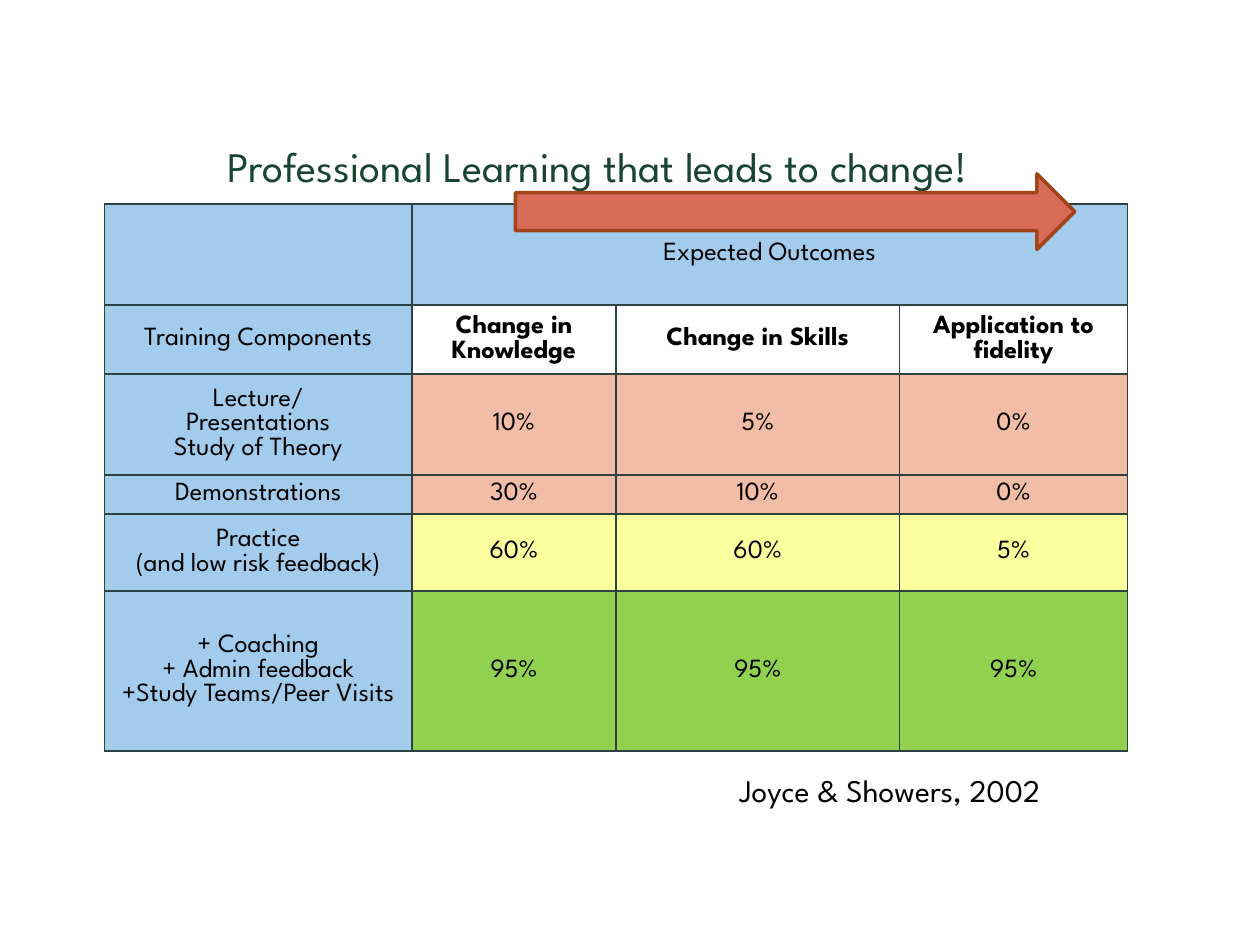
from lxml.etree import SubElement
from pptx import Presentation
from pptx.dml.color import RGBColor
from pptx.enum.shapes import MSO_SHAPE as Shape
from pptx.enum.text import MSO_ANCHOR as Anchor, PP_ALIGN as Align
from pptx.oxml.ns import qn
from pptx.util import Inches, Pt

BLACK = RGBColor(0x00, 0x00, 0x00)
WHITE = RGBColor(0xFF, 0xFF, 0xFF)
GREEN_TEXT = RGBColor(0x19, 0x44, 0x31)
BORDER = RGBColor(0x2D, 0x41, 0x41)
BLUE = RGBColor(0xA2, 0xCB, 0xEC)
PINK = RGBColor(0xF2, 0xBD, 0xA6)
YELLOW = RGBColor(0xFC, 0xFF, 0x9E)
GREEN = RGBColor(0x92, 0xD0, 0x50)
RED = RGBColor(0xD7, 0x6D, 0x59)
RUST = RGBColor(0xA3, 0x43, 0x18)

COLUMN_WIDTHS = [24.4, 16.2, 22.5, 18.1]
ROWS = [
    (8, WHITE, ["", "Expected Outcomes", "", ""]),
    (5.5, WHITE, ["Training Components", "Change in Knowledge",
                  "Change in Skills", "Application to fidelity"]),
    (8, PINK, ["Lecture/\nPresentations\nStudy of Theory", "10%", "5%", "0%"]),
    (3.1, PINK, ["Demonstrations", "30%", "10%", "0%"]),
    (6.1, YELLOW, ["Practice\n(and low risk feedback)", "60%", "60%", "5%"]),
    (12.7, GREEN, ["+ Coaching\n+ Admin feedback\n+Study Teams/Peer Visits",
                   "95%", "95%", "95%"]),
]


def write(tf, text, size=15, color=BLACK, bold=False, align=Align.CENTER):
    for i, line in enumerate(text.split("\n")):
        p = tf.paragraphs[0] if i == 0 else tf.add_paragraph()
        p.alignment = align
        r = p.add_run()
        r.text = line
        r.font.name = "League Spartan"
        r.font.size = Pt(size)
        r.font.bold = bold
        r.font.color.rgb = color


class SlideBuilder:
    """Places elements on a slide with a grid of 100 columns by 75 rows."""

    def __init__(self, prs):
        self.unit = prs.slide_width / 100
        self.shapes = prs.slides.add_slide(prs.slide_layouts[6]).shapes

    def grid(self, *lengths):
        return [round(n * self.unit) for n in lengths]

    def text(self, box, text, **style):
        tf = self.shapes.add_textbox(*self.grid(*box)).text_frame
        tf.word_wrap = True
        write(tf, text, **style)

    def arrow(self, box, fill, line):
        s = self.shapes.add_shape(Shape.RIGHT_ARROW, *self.grid(*box))
        s.shadow.inherit = False
        s.fill.solid()
        s.fill.fore_color.rgb = fill
        s.line.color.rgb = line
        s.line.width = Pt(2)

    def cell(self, cell, text, fill, bold):
        cell.vertical_anchor = Anchor.MIDDLE
        cell.margin_left = cell.margin_right = Inches(0.02)
        cell.margin_top = cell.margin_bottom = Inches(0.02)
        if text:
            write(cell.text_frame, text, bold=bold)
        props = cell._tc.get_or_add_tcPr()
        for side in ("a:lnL", "a:lnR", "a:lnT", "a:lnB"):
            ln = SubElement(props, qn(side), w=str(Pt(1)))
            solid = SubElement(ln, qn("a:solidFill"))
            SubElement(solid, qn("a:srgbClr"), val=str(BORDER))
        cell.fill.solid()
        cell.fill.fore_color.rgb = fill

    def table(self, left, top, widths, rows):
        box = self.grid(left, top, sum(widths), sum(row[0] for row in rows))
        table = self.shapes.add_table(len(rows), len(widths), *box).table
        table.first_row = table.horz_banding = False
        for column, width in zip(table.columns, self.grid(*widths)):
            column.width = width
        for i, (height, color, texts) in enumerate(rows):
            table.rows[i].height = self.grid(height)[0]
            for j, text in enumerate(texts):
                fill = BLUE if i == 0 or j == 0 else color
                self.cell(table.cell(i, j), text, fill, bold=i == 1 and j > 0)
        table.cell(0, 1).merge(table.cell(0, len(widths) - 1))


def main():
    prs = Presentation()
    prs.slide_width, prs.slide_height = Inches(10), Inches(7.5)
    s = SlideBuilder(prs)
    s.table(8.3, 16.2, COLUMN_WIDTHS, ROWS)
    s.text((10.6, 10.7, 74.5, 5), "Professional Learning that leads to change! ",
           size=24, color=GREEN_TEXT)
    s.text((57.7, 60.7, 34, 4), "Joyce & Showers, 2002", size=18, align=Align.LEFT)
    s.arrow((40.9, 13.8, 44.4, 6), RED, RUST)
    prs.save("out.pptx")


if __name__ == "__main__":
    main()
